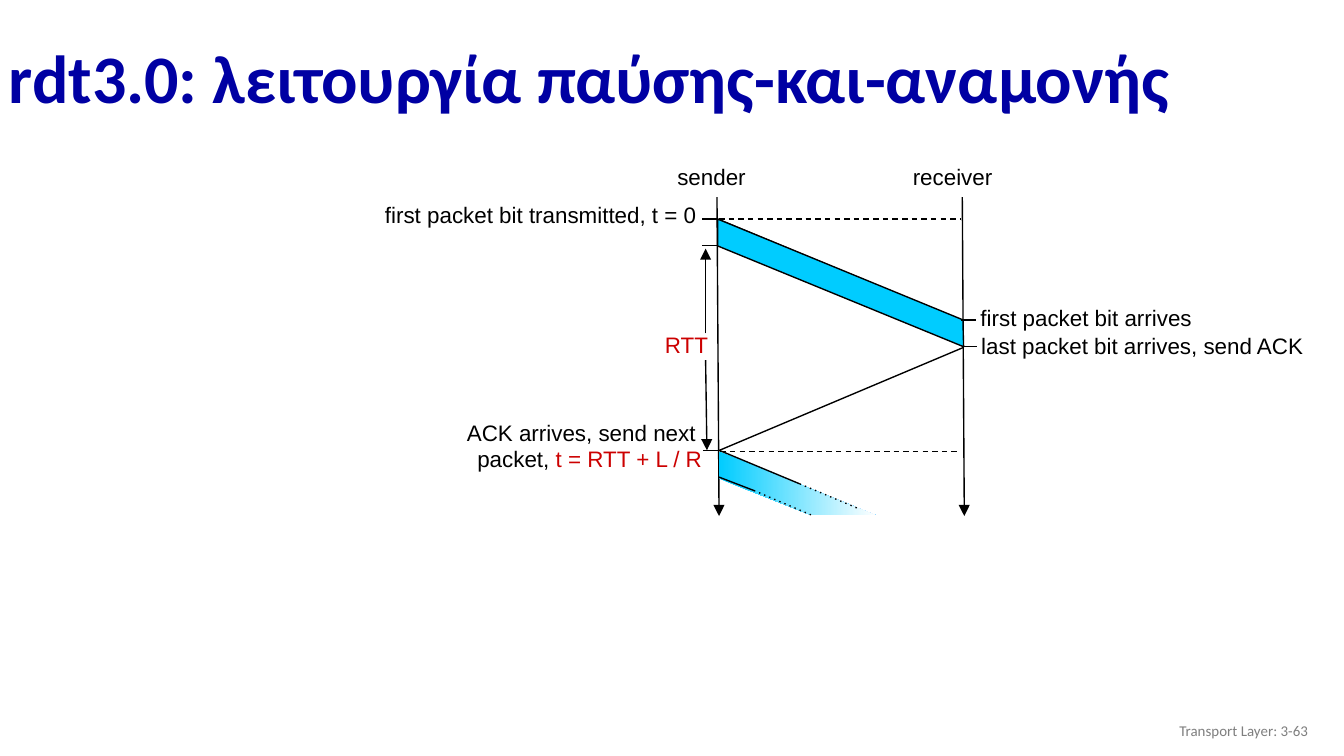
"""Build the rdt3.0 stop-and-wait timing slide."""
from dataclasses import dataclass

from lxml.etree import SubElement
from pptx import Presentation
from pptx.dml.color import RGBColor as RGB
from pptx.enum.shapes import MSO_CONNECTOR as Link, MSO_SHAPE as Preset
from pptx.enum.text import MSO_ANCHOR as Anchor, MSO_AUTO_SIZE as Fit, PP_ALIGN as Align
from pptx.oxml.ns import qn
from pptx.util import Pt


@dataclass(frozen=True)
class Theme:
    ink: RGB = RGB(0, 0, 0)
    paper: RGB = RGB(255, 255, 255)
    title: RGB = RGB(0, 0, 0xA3)
    accent: RGB = RGB(0xCC, 0, 0)
    packet: RGB = RGB(0, 0xCC, 0xFF)
    footer: RGB = RGB(0x7F, 0x7F, 0x7F)
    heading_font: str = "Calibri"
    label_font: str = "Arial"
    title_size: float = 36.4
    label_size: float = 12
    small_size: float = 8
    stroke: float = 0.75


theme = Theme()
PX = 4572
deck = Presentation()
deck.slide_width, deck.slide_height = 2000 * PX, 1125 * PX
slide = deck.slides.add_slide(deck.slide_layouts[5])
shapes = slide.shapes


def write(holder, paragraphs, font, align, anchor=Anchor.TOP, bold=False):
    frame = holder.text_frame
    frame.word_wrap, frame.auto_size, frame.vertical_anchor = True, Fit.NONE, anchor
    frame.margin_left = frame.margin_right = 15 * PX
    frame.margin_top = frame.margin_bottom = 7 * PX
    for index, runs in enumerate(paragraphs):
        paragraph = frame.add_paragraph() if index else frame.paragraphs[0]
        paragraph.alignment = align
        for words, size, color in runs:
            run = paragraph.add_run()
            run.text = words
            run.font.name, run.font.size, run.font.bold = font, Pt(size), bold
            run.font.color.rgb = color


def draw_line(x1, y1, x2, y2, dash=None, arrow=False):
    line = shapes.add_connector(Link.STRAIGHT, x1 * PX, y1 * PX, x2 * PX, y2 * PX)
    line.line.color.rgb, line.line.width = theme.ink, Pt(theme.stroke)
    properties = line.element.spPr
    stroke = properties.find(qn("a:ln"))
    if dash:
        SubElement(stroke, qn("a:prstDash"), val=dash)
    if arrow:
        SubElement(stroke, qn("a:tailEnd"), type="triangle")
    SubElement(properties, qn("a:effectLst"))


title = shapes.title
title.left, title.top, title.width, title.height = -2 * PX, 48 * PX, 1820 * PX, 146 * PX
write(title, [[("rdt3.0: λειτουργία παύσης-και-αναμονής", theme.title_size, theme.title)]],
      theme.heading_font, Align.LEFT, Anchor.MIDDLE, True)
title.text_frame.paragraphs[0].line_spacing = 0.9

draw_line(1068, 326, 1434, 478)
for top_x, top_y, foot_x in [(1067, 290, 1070), (1432, 292, 1435)]:
    draw_line(top_x, top_y, foot_x, 768, arrow=True)

for words, x, y, width in [
    ("first packet bit transmitted, t = 0", 522, 293, 530),
    ("sender", 979, 235, 146),
    ("receiver", 1336, 235, 156),
]:
    label = shapes.add_shape(Preset.RECTANGLE, x * PX, y * PX, width * PX, 58 * PX)
    label.shadow.inherit = False
    label.fill.solid()
    label.fill.fore_color.rgb = theme.paper
    label.line.fill.background()
    write(label, [[(words, theme.label_size, theme.ink)]], theme.label_font, Align.RIGHT)

for x, y in [(1070, 326), (1072, 672)]:
    draw_line(x, y, 1430, y, "dash")
draw_line(1071, 670, 1434, 517)

bands = []
for start, *corners in [
    [(1068, 326), (1433, 476), (1434, 516), (1068, 366)],
    [(1070, 672), (1304, 767), (1208, 767), (1070, 712)],
]:
    outline = shapes.build_freeform(*start, scale=PX)
    outline.add_line_segments(corners, close=True)
    band = outline.convert_to_shape()
    band.shadow.inherit = False
    bands.append(band)

first_packet, next_packet = bands
first_packet.fill.solid()
first_packet.fill.fore_color.rgb = theme.packet
first_packet.line.color.rgb, first_packet.line.width = theme.ink, Pt(theme.stroke)
next_packet.fill.gradient()
next_packet.fill.gradient_angle = 0
for stop, color, position in zip(next_packet.fill.gradient_stops, (theme.packet, theme.paper), (0, 1)):
    stop.color.rgb, stop.position = color, position
next_packet.line.fill.background()

for x1, y, x2 in [(1067, 326, 1044), (1067, 365, 1044), (1068, 670, 1046),
                  (1452, 476, 1430), (1433, 516, 1454)]:
    draw_line(x1, y, x2, y)
for x1, y1, x2, y2 in [(1050, 536, 1052, 670), (1050, 496, 1050, 370)]:
    draw_line(x1, y1, x2, y2, arrow=True)
for start, fade, end in [
    ((1070, 670), (1190, 720), (1280, 758)),
    ((1070, 710), (1122, 730), (1211, 768)),
]:
    draw_line(*start, *fade)
    draw_line(*fade, *end, "dot")

for x, y, width, height, align, paragraphs in [
    (935, 485, 140, 56, Align.RIGHT,
     [[("RTT", theme.label_size, theme.accent), (" ", theme.small_size, theme.ink)]]),
    (1444, 446, 398, 58, Align.LEFT,
     [[("first packet bit arrives", theme.label_size, theme.ink)]]),
    (1445, 488, 510, 94, Align.LEFT,
     [[("last packet bit arrives, send ACK", theme.label_size, theme.ink)]]),
    (620, 616, 440, 104, Align.RIGHT,
     [[("ACK arrives, send next ", theme.label_size, theme.ink)],
      [("packet, ", theme.label_size, theme.ink),
       ("t = RTT + L / R", theme.label_size, theme.accent)]]),
]:
    note = shapes.add_textbox(x * PX, y * PX, width * PX, height * PX)
    write(note, paragraphs, theme.label_font, align)

page_number = shapes.add_textbox(1512 * PX, 1057 * PX, 450 * PX, 60 * PX)
write(page_number, [[("Transport Layer: 3-63", theme.small_size, theme.footer)]],
      theme.heading_font, Align.RIGHT, Anchor.MIDDLE)

deck.save("out.pptx")
